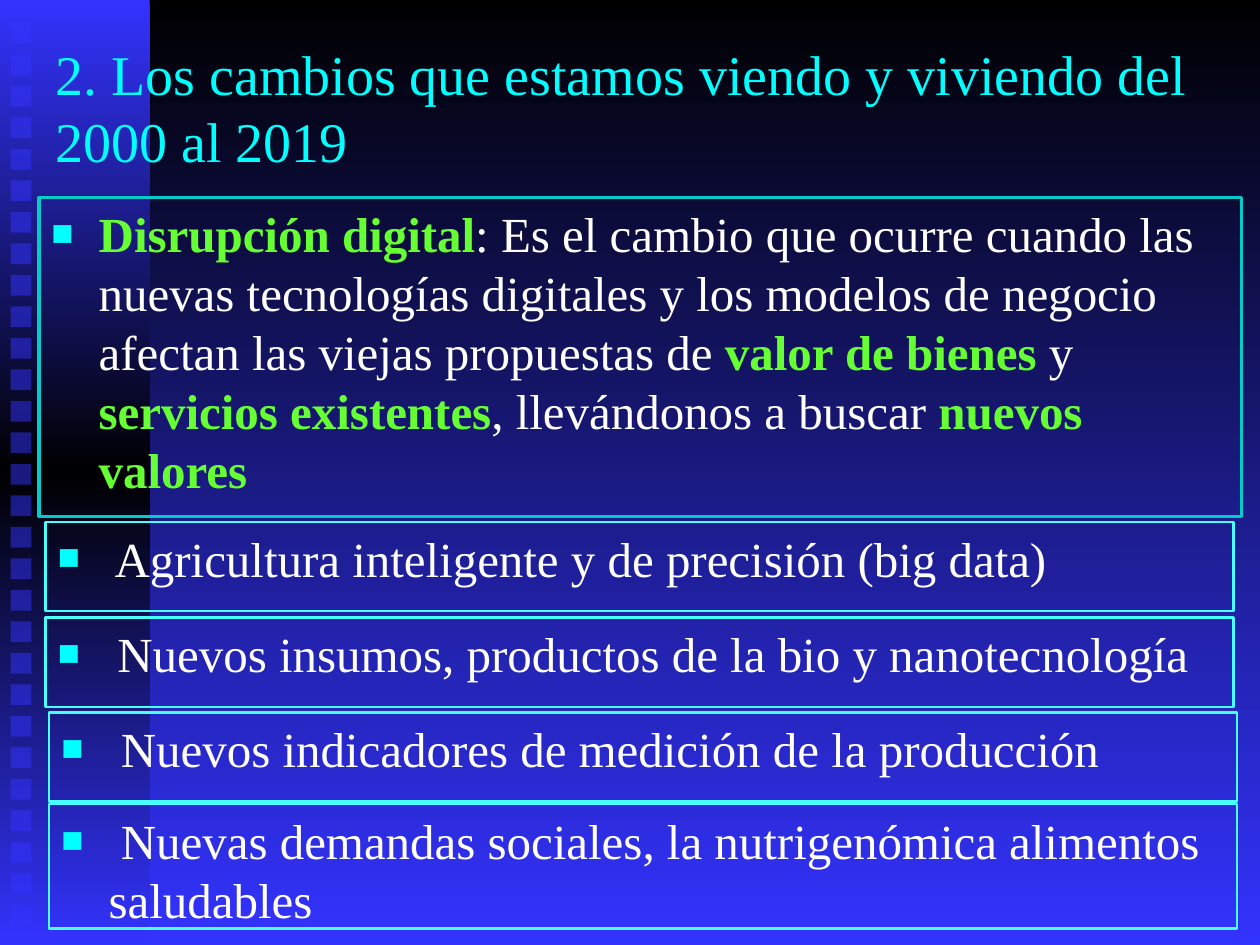
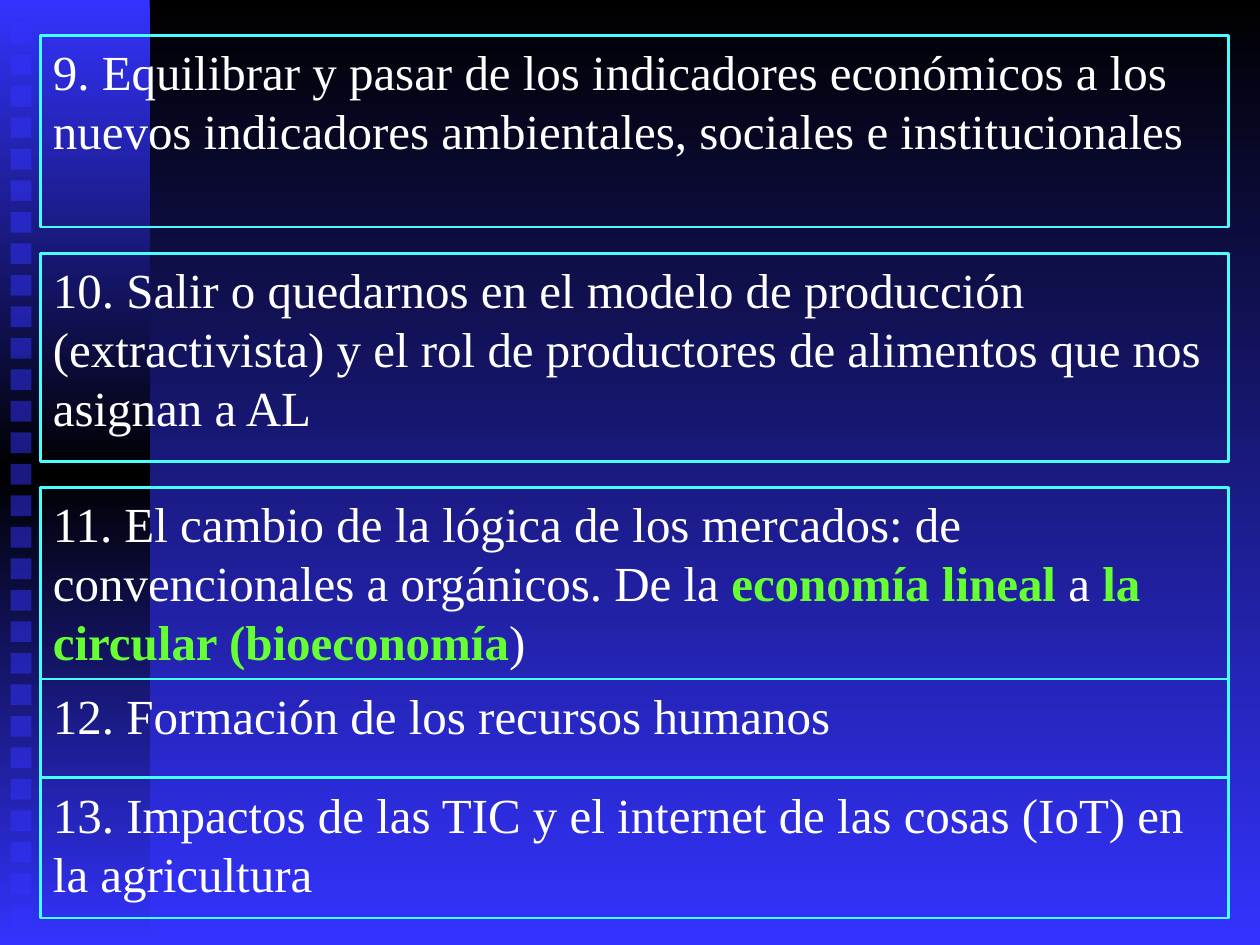
from copy import deepcopy

from lxml.etree import SubElement
from pptx import Presentation
from pptx.dml.color import RGBColor
from pptx.enum.shapes import MSO_SHAPE as Preset
from pptx.enum.text import MSO_ANCHOR as Anchor, MSO_AUTO_SIZE as AutoSize, PP_ALIGN as Align
from pptx.oxml.ns import qn
from pptx.util import Pt

FONT = "Times New Roman"
BLACK, BLUE, WHITE, GREEN = "000000", "3333FF", "FFFFFF", "66FF33"
CYAN, PALE_CYAN, TEAL = "00FFFF", "47FFFF", "00CCCC"
SLIDE_WIDTH, SLIDE_HEIGHT = 720, 540
BAND_WIDTH, BOX_WIDTH = 85.5, 679
SQUARE_COUNT, SQUARE_SIZE, SQUARE_PITCH = 29, 12, 18
SQUARE_LEFT, FIRST_SQUARE_TOP = 6, 13
BULLET_INDENT = 27

TITLE = "2. Los cambios que estamos viendo y viviendo del 2000 al 2019"
TITLE_PLACE = (24.5, 21, 676.8, 80)

DISRUPTION = (
    "**Disrupción digital**: Es el cambio que ocurre cuando las nuevas tecnologías digitales "
    "y los modelos de negocio afectan las viejas propuestas de **valor de bienes **y "
    "**servicios existentes**, llevándonos a buscar **nuevos valores**"
)
DISRUPTION_PLACE = (22.3, 113, 687, 182)

CHANGES = [
    (" Agricultura inteligente y de precisión (big data)", 26, 298.2, 51),
    (" Nuevos insumos, productos de la bio y nanotecnología", 26, 353, 51),
    (" Nuevos indicadores de medición de la producción", 28, 407, 51),
    (" Nuevas demandas sociales, la nutrigenómica alimentos saludables", 28, 459.5, 71.2),
]

CHALLENGES_LEFT = 23.2
CHALLENGES = [
    ("9. Equilibrar y pasar de los indicadores económicos a los nuevos indicadores "
     "ambientales, sociales e institucionales", 20.2, 109.5),
    ("10. Salir o quedarnos en el modelo de producción (extractivista) y el rol de "
     "productores de alimentos que nos asignan a AL", 144.7, 119),
    ("11. El cambio de la lógica de los mercados: de convencionales a orgánicos. De la "
     "**economía lineal **a **la circular (bioeconomía**)", 278.6, 109.5),
    ("12. Formación de los recursos humanos", 388.1, 56.4),
    ("13. Impactos de las TIC y el internet de las cosas (IoT) en la agricultura", 444.7, 80),
]


def rgb(value):
    """Turn a hex string into a colour."""
    return RGBColor.from_string(value)


def paint_gradient(owner, fill, *colors):
    """Fill from top to bottom with evenly spaced colours."""
    fill.gradient()
    fill.gradient_angle = 270
    stops = owner.element.xpath(".//a:gsLst")[0]
    while len(stops) < len(colors):
        stops.insert(1, deepcopy(stops[0]))
    for index, (stop, color) in enumerate(zip(fill.gradient_stops, colors)):
        stop.position = index / (len(colors) - 1)
        stop.color.rgb = rgb(color)


def add_rect(shapes, place):
    """Add a rectangle without shadow or outline."""
    rect = shapes.add_shape(Preset.RECTANGLE, *map(Pt, place))
    rect.shadow.inherit = False
    rect.line.fill.background()
    return rect


def write(frame, text, size=28, color=WHITE, anchor=Anchor.TOP, before=5.6, bullet=False):
    """Write one paragraph, with the parts between ** in bold green."""
    frame.word_wrap = True
    frame.auto_size = AutoSize.NONE
    frame.vertical_anchor = anchor
    frame.margin_left = frame.margin_right = Pt(7.2)
    frame.margin_top = frame.margin_bottom = Pt(3.6)
    paragraph = frame.paragraphs[0]
    paragraph.alignment = Align.LEFT
    paragraph.space_before = Pt(before)
    if bullet:
        add_bullet(paragraph)
    for index, part in enumerate(text.split("**")):
        if part:
            run = paragraph.add_run()
            run.text = part
            run.font.name, run.font.size = FONT, Pt(size)
            run.font.bold = index % 2 == 1
            run.font.color.rgb = rgb(GREEN if run.font.bold else color)


def add_bullet(paragraph):
    """Give the paragraph a hanging square bullet."""
    props = paragraph._p.get_or_add_pPr()
    props.set("marL", str(Pt(BULLET_INDENT)))
    props.set("indent", str(-Pt(BULLET_INDENT)))
    SubElement(SubElement(props, qn("a:buClr")), qn("a:srgbClr"), val=CYAN)
    SubElement(props, qn("a:buSzPct"), val="75000")
    SubElement(props, qn("a:buFont"), typeface=FONT)
    SubElement(props, qn("a:buChar"), char="■")


def add_box(slide, place, text, outline=PALE_CYAN, weight=1.5, bullet=False):
    """Add an outlined, unfilled box of text."""
    box = add_rect(slide.shapes, place)
    box.fill.background()
    box.line.color.rgb = rgb(outline)
    box.line.width = Pt(weight)
    write(box.text_frame, text, bullet=bullet)


def decorate_master(master, slide):
    """Give the master its background, side band and column of squares."""
    paint_gradient(master, master.background.fill, BLACK, BLUE)
    decoration = slide.shapes.add_group_shape()
    band = add_rect(decoration.shapes, (0, 0, BAND_WIDTH, SLIDE_HEIGHT))
    paint_gradient(band, band.fill, BLUE, BLACK, BLUE)
    for row in range(SQUARE_COUNT):
        top = FIRST_SQUARE_TOP + row * SQUARE_PITCH
        square = add_rect(decoration.shapes, (SQUARE_LEFT, top, SQUARE_SIZE, SQUARE_SIZE))
        square.fill.solid()
        square.fill.fore_color.rgb = rgb(BLUE)
        SubElement(square.element.xpath(".//a:srgbClr")[0], qn("a:alpha"), val="50000")
    for number, props in enumerate(decoration.element.xpath(".//p:cNvPr"), 100):
        props.set("id", str(number))
    master.shapes.element.insert(2, decoration.element)


def main():
    """Build both slides and save them."""
    prs = Presentation()
    prs.slide_width, prs.slide_height = Pt(SLIDE_WIDTH), Pt(SLIDE_HEIGHT)
    title_only, blank = prs.slide_layouts[5], prs.slide_layouts[6]

    changes_slide = prs.slides.add_slide(title_only)
    decorate_master(prs.slide_master, changes_slide)
    title = changes_slide.shapes.title
    title.left, title.top, title.width, title.height = map(Pt, TITLE_PLACE)
    write(title.text_frame, TITLE, size=32, color=CYAN, anchor=Anchor.MIDDLE, before=0)
    for text, left, top, height in CHANGES:
        add_box(changes_slide, (left, top, BOX_WIDTH, height), text, bullet=True)
    add_box(changes_slide, DISRUPTION_PLACE, DISRUPTION, outline=TEAL, weight=1.75, bullet=True)

    challenges_slide = prs.slides.add_slide(blank)
    for text, top, height in CHALLENGES:
        add_box(challenges_slide, (CHALLENGES_LEFT, top, BOX_WIDTH, height), text)

    prs.save("out.pptx")


if __name__ == "__main__":
    main()
